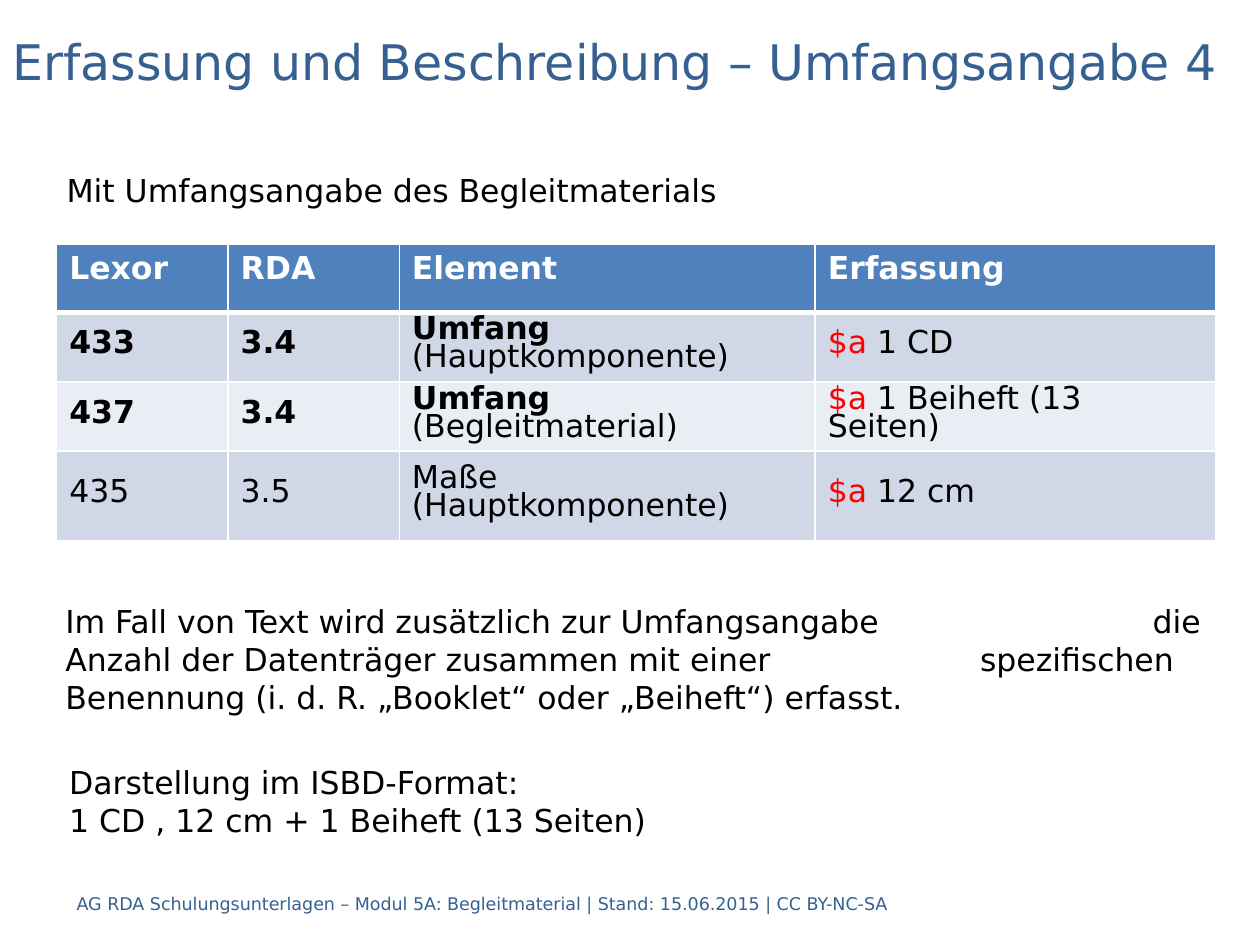
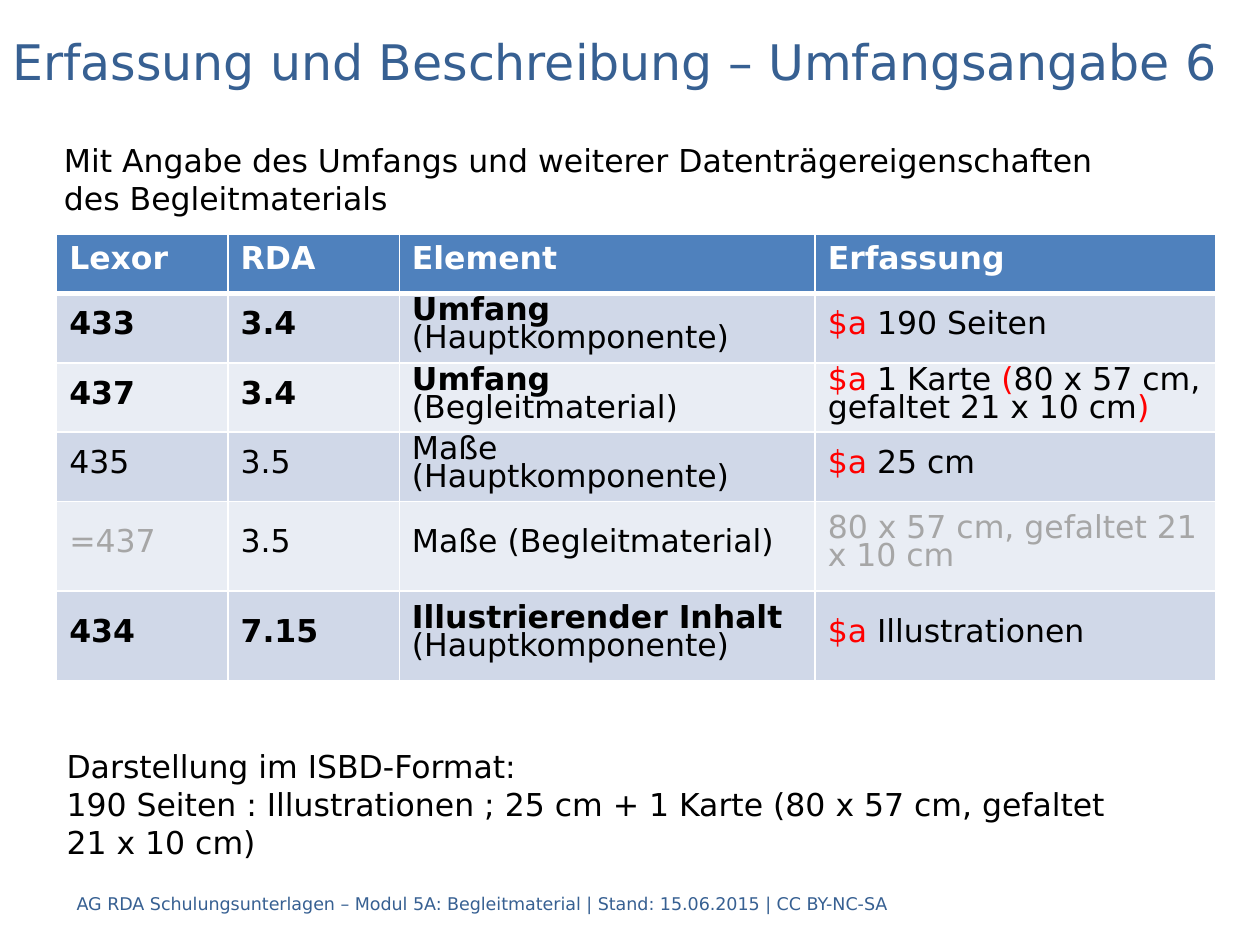
from lxml import etree
from pptx import Presentation
from pptx.dml.color import RGBColor
from pptx.enum.shapes import MSO_SHAPE as Preset
from pptx.enum.text import MSO_ANCHOR as Anchor, MSO_AUTO_SIZE as AutoSize, PP_ALIGN as Align
from pptx.oxml.ns import qn
from pptx.util import Inches, Pt

FONT = "DejaVu Sans"
BLACK, WHITE, NAVY = "000000", "FFFFFF", "376092"
RED, GREY, HEADER_BLUE = "FF0000", "A6A6A6", "4F81BD"
BANDS = ["D0D8E8", "E9EDF4"]

FOOTER = "AG RDA Schulungsunterlagen – Modul 5A: Begleitmaterial | Stand: 15.06.2015 | CC BY-NC-SA"
HEADINGS = ["Lexor", "RDA", "Element", "Erfassung"]
COLUMN_WIDTHS = [1.36, 1.36, 3.3, 3.18]
HEADER_RULE, GRID_RULE = 3, 1


def rgb(hex_colour):
    return RGBColor.from_string(hex_colour)


def format_run(run, size, colour, bold=False):
    run.font.name = FONT
    run.font.size = Pt(size)
    run.font.bold = bold
    run.font.color.rgb = rgb(colour)


def write_lines(shape, lines, size=18, colour=BLACK, anchor=Anchor.TOP):
    frame = shape.text_frame
    frame.word_wrap = True
    frame.vertical_anchor = anchor
    frame.text = "\n".join(lines)
    for paragraph in frame.paragraphs:
        paragraph.alignment = Align.LEFT
        for run in paragraph.runs:
            format_run(run, size, colour)
    return frame


def add_label(slide, box, text, size, colour=NAVY):
    label = slide.shapes.add_textbox(*map(Inches, box))
    write_lines(label, [text], size, colour, Anchor.MIDDLE)


def add_note(slide, box, lines):
    """White panel that carries running text."""
    note = slide.shapes.add_shape(Preset.RECTANGLE, *map(Inches, box))
    note.shadow.inherit = False
    note.fill.solid()
    note.fill.fore_color.rgb = rgb(WHITE)
    note.line.fill.background()
    write_lines(note, lines).auto_size = AutoSize.SHAPE_TO_FIT_TEXT


def add_tabbed_text(slide, box, text, stops):
    """Paragraph whose gaps come from tab stops, in inches from the text edge."""
    remark = slide.shapes.add_textbox(*map(Inches, box))
    frame = write_lines(remark, [text])
    frame.auto_size = AutoSize.SHAPE_TO_FIT_TEXT
    properties = frame.paragraphs[0]._p.get_or_add_pPr()
    tab_list = etree.SubElement(properties, qn("a:tabLst"))
    for stop in stops:
        etree.SubElement(tab_list, qn("a:tab"), pos=str(Inches(stop)), algn="l")


def style_cell(cell, fill, top, bottom):
    """White borders, with the top and bottom widths in points, and a solid fill."""
    properties = cell._tc.get_or_add_tcPr()
    widths = {"lnL": GRID_RULE, "lnR": GRID_RULE, "lnT": top, "lnB": bottom}
    for side, width in widths.items():
        line = etree.SubElement(properties, qn(f"a:{side}"), w=str(Pt(width)))
        solid = etree.SubElement(line, qn("a:solidFill"))
        etree.SubElement(solid, qn("a:srgbClr"), val=WHITE)
    cell.fill.solid()
    cell.fill.fore_color.rgb = rgb(fill)


def fill_body_cell(cell, pieces):
    cell.vertical_anchor = Anchor.MIDDLE
    cell.margin_top = cell.margin_bottom = 0
    paragraph = cell.text_frame.paragraphs[0]
    paragraph.line_spacing = Pt(16)
    paragraph.space_before = paragraph.space_after = Pt(6)
    for text, colour, bold in pieces:
        run = paragraph.add_run()
        run.text = text
        format_run(run, 18, colour, bold)


def add_field_table(slide, left, top, row_heights, entries):
    size = (sum(COLUMN_WIDTHS), sum(row_heights))
    frame = slide.shapes.add_table(len(row_heights), len(HEADINGS),
                                   *map(Inches, (left, top, *size)))
    table = frame.table
    for column, width in zip(table.columns, COLUMN_WIDTHS):
        column.width = Inches(width)
    for row, height in zip(table.rows, row_heights):
        row.height = Inches(height)

    for cell, heading in zip(table.rows[0].cells, HEADINGS):
        style_cell(cell, HEADER_BLUE, GRID_RULE, HEADER_RULE)
        cell.text_frame.text = heading
        format_run(cell.text_frame.paragraphs[0].runs[0], 18, WHITE, bold=True)

    for index, entry in enumerate(entries):
        top_rule = GRID_RULE if index else HEADER_RULE
        for cell, pieces in zip(table.rows[index + 1].cells, entry):
            style_cell(cell, BANDS[index % 2], top_rule, GRID_RULE)
            fill_body_cell(cell, pieces)


def plain(text, colour=BLACK):
    return (text, colour, False)


def strong(text):
    return (text, BLACK, True)


def subfield(*pieces):
    """Recorded value after its red subfield code."""
    return [plain("$a ", RED), *pieces]


def core_entry(field, rule, element, part, value):
    """Row of a core element, set in bold."""
    return [[strong(field)], [strong(rule)], [strong(element + " "), plain(part)], value]


def extra_entry(field, rule, element, value):
    return [[field], [plain(rule)], [plain(element)], value]


def add_extent_slide(deck, number):
    """Slide with the shared title and footer."""
    slide = deck.slides.add_slide(deck.slide_layouts[6])
    add_label(slide, (0.51, 6.97, 7.17, 0.4), FOOTER, 10)
    add_label(slide, (0, 0.2, 10, 0.56),
              f"Erfassung und Beschreibung – Umfangsangabe {number}", 28)
    return slide


def build_booklet_slide(deck):
    slide = add_extent_slide(deck, 4)
    add_field_table(slide, 0.45, 1.94, [0.54, 0.55, 0.55, 0.71], [
        core_entry("433", "3.4", "Umfang", "(Hauptkomponente)", subfield(plain("1 CD"))),
        core_entry("437", "3.4", "Umfang", "(Begleitmaterial)",
                   subfield(plain("1 Beiheft (13 Seiten)"))),
        extra_entry(plain("435"), "3.5", "Maße (Hauptkomponente)", subfield(plain("12 cm"))),
    ])
    add_note(slide, (0.43, 1.31, 8.66, 0.4), ["Mit Umfangsangabe des Begleitmaterials"])
    add_note(slide, (0.45, 6.01, 8.74, 0.71),
             ["Darstellung im ISBD-Format:", "1 CD , 12 cm + 1 Beiheft (13 Seiten)"])
    add_tabbed_text(
        slide, (0.42, 4.73, 9.22, 1.01),
        "Im Fall von Text wird zusätzlich zur Umfangsangabe \t\tdie Anzahl der Datenträger "
        "zusammen mit einer \tspezifischen Benennung (i. d. R. „Booklet“ oder „Beiheft“) erfasst.",
        stops=[7.26, 8.63])


def build_map_slide(deck):
    slide = add_extent_slide(deck, 6)
    map_size = "80 x 57 cm, gefaltet 21 x 10 cm"
    add_field_table(slide, 0.45, 1.86, [0.47, 0.55, 0.55, 0.55, 0.71, 0.71], [
        core_entry("433", "3.4", "Umfang", "(Hauptkomponente)", subfield(plain("190 Seiten"))),
        core_entry("437", "3.4", "Umfang", "(Begleitmaterial)",
                   subfield(plain("1 Karte "), plain("(", RED), plain(map_size), plain(")", RED))),
        extra_entry(plain("435"), "3.5", "Maße (Hauptkomponente)", subfield(plain("25 cm"))),
        extra_entry(plain("=437", GREY), "3.5", "Maße (Begleitmaterial)",
                    [plain(map_size, GREY)]),
        core_entry("434", "7.15", "Illustrierender Inhalt", "(Hauptkomponente)",
                   subfield(plain("Illustrationen"))),
    ])
    add_note(slide, (0.41, 1.07, 8.66, 0.71),
             ["Mit Angabe des Umfangs und weiterer Datenträgereigenschaften des Begleitmaterials"])
    add_note(slide, (0.43, 5.88, 8.74, 1.01),
             ["Darstellung im ISBD-Format:",
              f"190 Seiten : Illustrationen ; 25 cm + 1 Karte ({map_size})"])


def main():
    deck = Presentation()
    deck.slide_width, deck.slide_height = Inches(10), Inches(7.5)
    build_booklet_slide(deck)
    build_map_slide(deck)
    deck.save("out.pptx")


if __name__ == "__main__":
    main()
